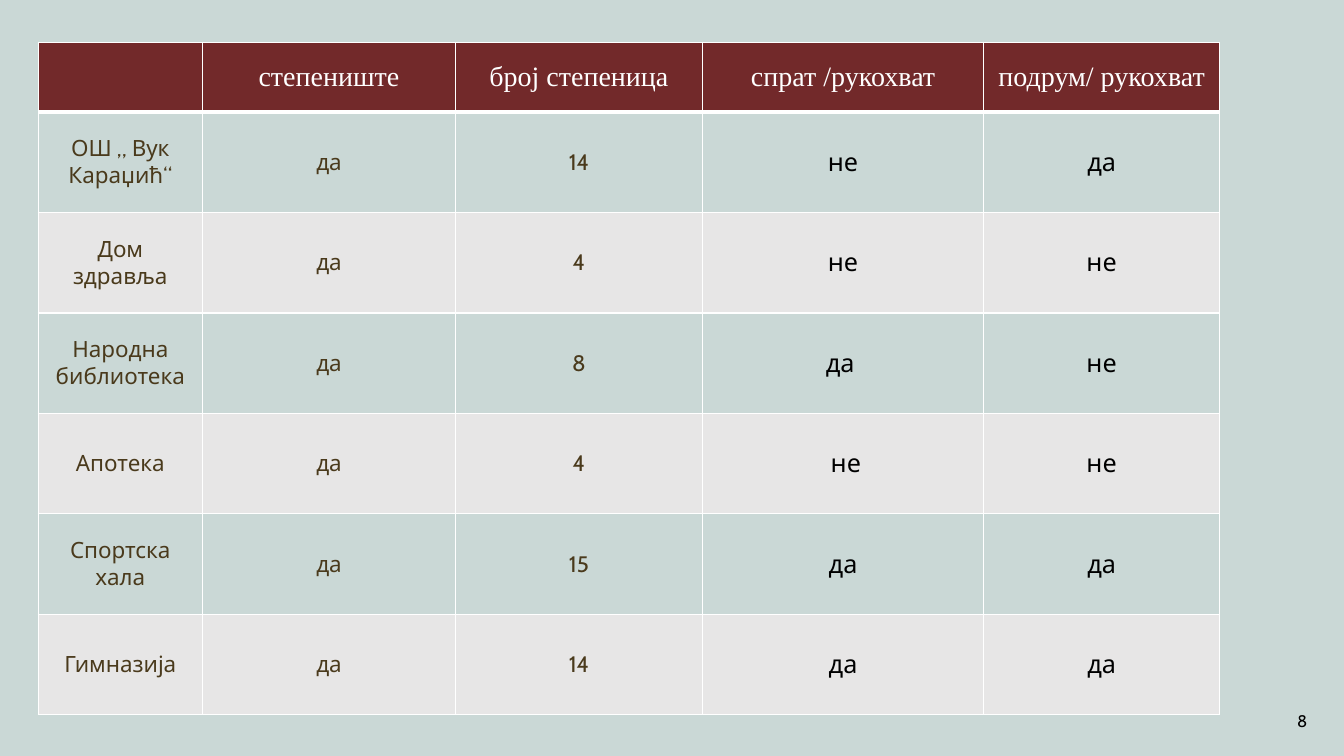
from pptx import Presentation
from pptx.util import Pt
from pptx.dml.color import RGBColor
from pptx.enum.text import MSO_ANCHOR as Anchor, PP_ALIGN as Align
from pptx.oxml import parse_xml
from pptx.oxml.ns import nsdecls

HEADER_FILL, BAND_FILLS = "72292A", ("CAD8D6", "E7E6E6")
WHITE, BROWN, BLACK = "FFFFFF", "4A3A1C", "000000"


def color(hex_text):
    return RGBColor.from_string(hex_text)


def style(para, font_name, size, hex_text, align):
    para.alignment = align
    para.font.name = font_name
    para.font.size = Pt(size)
    para.font.color.rgb = color(hex_text)


deck = Presentation()
deck.slide_width, deck.slide_height = Pt(960), Pt(540)
page = deck.slides.add_slide(deck.slide_layouts[6])
page.background.fill.solid()
page.background.fill.fore_color.rgb = color(BAND_FILLS[0])

# Table of buildings and their stairs
rows = [
    ["", "степениште", "број степеница", "спрат /рукохват", "подрум/ рукохват"],
    ["ОШ „ Вук Караџић“", "да", "14", "не", "да"],
    ["Дом здравља", "да", "4", "не", "не"],
    ["Народна библиотека", "да", "8", "да ", "не"],
    ["Апотека", "да", "4", " не", "не"],
    ["Спортска хала", "да", "15", "да", "да"],
    ["Гимназија", "да", "14", "да", "да"],
]
column_widths = [117.4, 180.7, 176.4, 200.9, 168.5]
header_height, row_height = 49.8, 71.8
table = page.shapes.add_table(
    len(rows), len(column_widths), Pt(27.3), Pt(30.2), Pt(sum(column_widths)),
    Pt(header_height + row_height * (len(rows) - 1))).table

for column, width in zip(table.columns, column_widths):
    column.width = Pt(width)

for r, texts in enumerate(rows):
    table.rows[r].height = Pt(row_height if r else header_height)
    for c, text in enumerate(texts):
        cell = table.cell(r, c)
        cell.text = text
        cell.vertical_anchor = Anchor.MIDDLE
        cell.fill.solid()
        cell.fill.fore_color.rgb = color(BAND_FILLS[(r - 1) % 2] if r else HEADER_FILL)

        para = cell.text_frame.paragraphs[0]
        if r == 0:
            style(para, "Times New Roman", 20, WHITE, Align.CENTER)
        elif c < 3:
            style(para, "Cabin", 16, BROWN, Align.CENTER)
        else:
            style(para, "Cabin", 18, BLACK, Align.CENTER)

        # White borders, thicker under the header
        borders = {"lnL": 1, "lnR": 1, "lnT": 3 if r == 1 else 1, "lnB": 1 if r else 3}
        for place, (side, width) in enumerate(borders.items()):
            cell._tc.get_or_add_tcPr().insert(place, parse_xml(
                f'<a:{side} {nsdecls("a")} w="{Pt(width)}"><a:solidFill>'
                f'<a:srgbClr val="{WHITE}"/></a:solidFill></a:{side}>'))

# Slide number
number_box = page.shapes.add_textbox(Pt(725), Pt(500.4), Pt(216), Pt(28.8))
number_box.text_frame.word_wrap = True
number_box.text_frame.vertical_anchor = Anchor.MIDDLE
number_box.text_frame.text = "8"
style(number_box.text_frame.paragraphs[0], "Cabin", 12, BLACK, Align.RIGHT)

deck.save("out.pptx")
